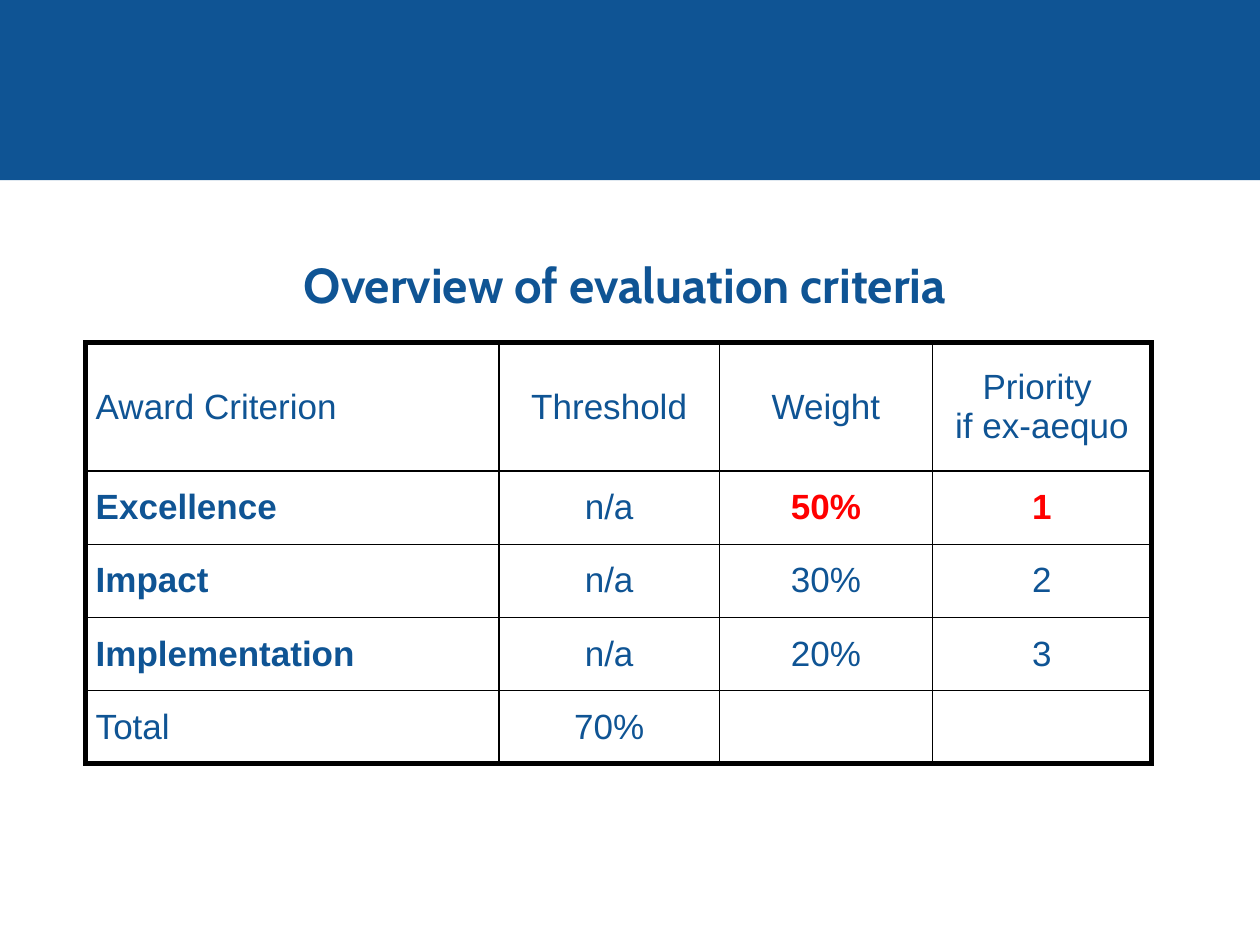
from typing import NamedTuple

from lxml.etree import SubElement
from pptx import Presentation
from pptx.dml.color import RGBColor
from pptx.enum.shapes import MSO_SHAPE as Preset
from pptx.enum.text import MSO_ANCHOR as Anchor, PP_ALIGN as Align
from pptx.oxml.ns import qn
from pptx.util import Inches, Pt

COLORS = {"blue": "0F5494", "red": "FF0000", "border": "000000"}
COLUMN_WIDTHS = (3.28, 1.75, 1.69, 1.74)
HEADER_HEIGHT, CRITERION_HEIGHT = 1.02, 0.58
OUTER_LINE, INNER_LINE = 3, 1


class Criterion(NamedTuple):
    name: str
    threshold: str
    weight: str = ""
    priority: str = ""


HEADINGS = Criterion("Award Criterion", "Threshold", "Weight", "Priority \vif ex-aequo")
CRITERIA = (
    Criterion("Excellence", "n/a", "50%", "1"),
    Criterion("Impact", "n/a", "30%", "2"),
    Criterion("Implementation", "n/a", "20%", "3"),
)
TOTAL = Criterion("Total", "70%")
ROWS = (HEADINGS, *CRITERIA, TOTAL)


def rgb(name: str) -> RGBColor:
    return RGBColor.from_string(COLORS[name])


def style_text(paragraph, font_name: str, size: int, color: str, bold: bool, align) -> None:
    paragraph.alignment = align
    font = paragraph.font
    font.name, font.size, font.bold = font_name, Pt(size), bold
    font.color.rgb = rgb(color)


def add_border(cell, side: str, width: int) -> None:
    properties = cell._tc.get_or_add_tcPr()
    line = SubElement(properties, qn(f"a:ln{side}"), w=str(Pt(width)))
    fill = SubElement(line, qn("a:solidFill"))
    SubElement(fill, qn("a:srgbClr"), val=COLORS["border"])


def fill_cell(cell, text: str, row: int, column: int) -> None:
    outer_sides = {
        "L": column == 0,
        "R": column == len(COLUMN_WIDTHS) - 1,
        "T": row == 0,
        "B": row == len(ROWS) - 1,
    }
    for side, is_outer in outer_sides.items():
        add_border(cell, side, OUTER_LINE if is_outer else INNER_LINE)
    cell.fill.background()
    cell.vertical_anchor = Anchor.MIDDLE
    cell.margin_left = cell.margin_right = Inches(0.08)
    cell.margin_top = cell.margin_bottom = Inches(0.04)
    cell.text = text
    is_name = column == 0
    is_top_score = ROWS[row] == CRITERIA[0] and column >= 2
    style_text(
        cell.text_frame.paragraphs[0], "Arial", 20,
        color="red" if is_top_score else "blue",
        bold=is_top_score or (is_name and ROWS[row] in CRITERIA),
        align=Align.LEFT if is_name else Align.CENTER,
    )


def add_banner(slide) -> None:
    banner = slide.shapes.add_shape(
        Preset.RECTANGLE, Inches(0), Inches(-0.04), Inches(10), Inches(1.47))
    banner.shadow.inherit = False
    banner.fill.solid()
    banner.fill.fore_color.rgb = rgb("blue")
    banner.line.fill.background()


def add_criteria_table(slide) -> None:
    heights = [HEADER_HEIGHT] + [CRITERION_HEIGHT] * (len(ROWS) - 1)
    table = slide.shapes.add_table(
        len(ROWS), len(COLUMN_WIDTHS), Inches(0.68), Inches(2.72),
        Inches(sum(COLUMN_WIDTHS)), Inches(sum(heights))).table
    table.first_row = table.horz_banding = False
    for column, width in zip(table.columns, COLUMN_WIDTHS):
        column.width = Inches(width)
    for row, height in zip(table.rows, heights):
        row.height = Inches(height)
    for row, criterion in enumerate(ROWS):
        for column, text in enumerate(criterion):
            fill_cell(table.cell(row, column), text, row, column)


def format_title(slide) -> None:
    title = slide.shapes.title
    title.left, title.top = Inches(0.43), Inches(1.94)
    title.width, title.height = Inches(9.06), Inches(0.63)
    heading = title.text_frame
    heading.text = "Overview of evaluation criteria"
    heading.word_wrap = True
    heading.vertical_anchor = Anchor.MIDDLE
    style_text(heading.paragraphs[0], "Cabin", 28, "blue", True, Align.CENTER)


def main() -> None:
    deck = Presentation()
    deck.slide_width, deck.slide_height = Inches(10), Inches(7.5)
    slide = deck.slides.add_slide(deck.slide_layouts[5])
    add_banner(slide)
    add_criteria_table(slide)
    format_title(slide)
    deck.save("out.pptx")


if __name__ == "__main__":
    main()
